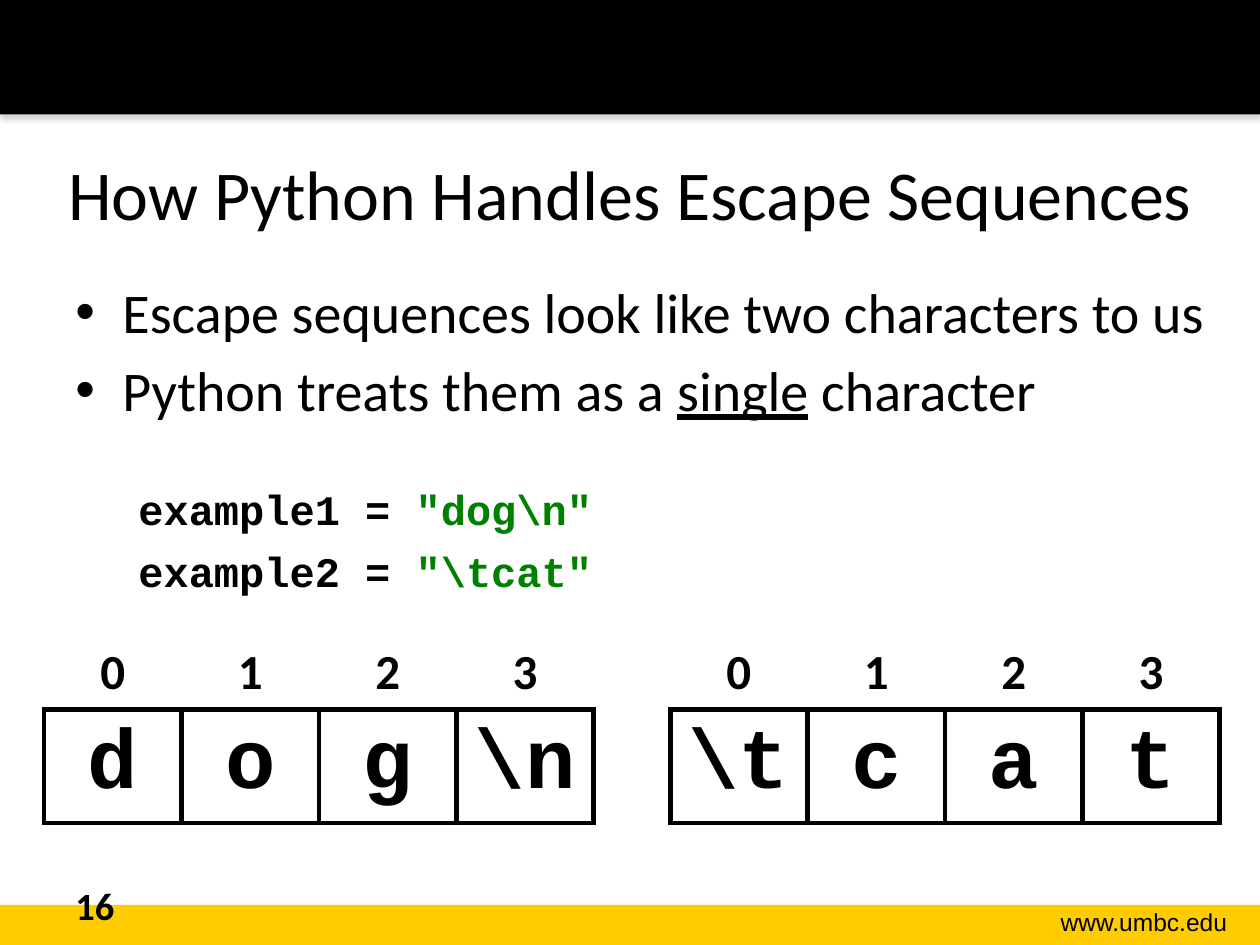
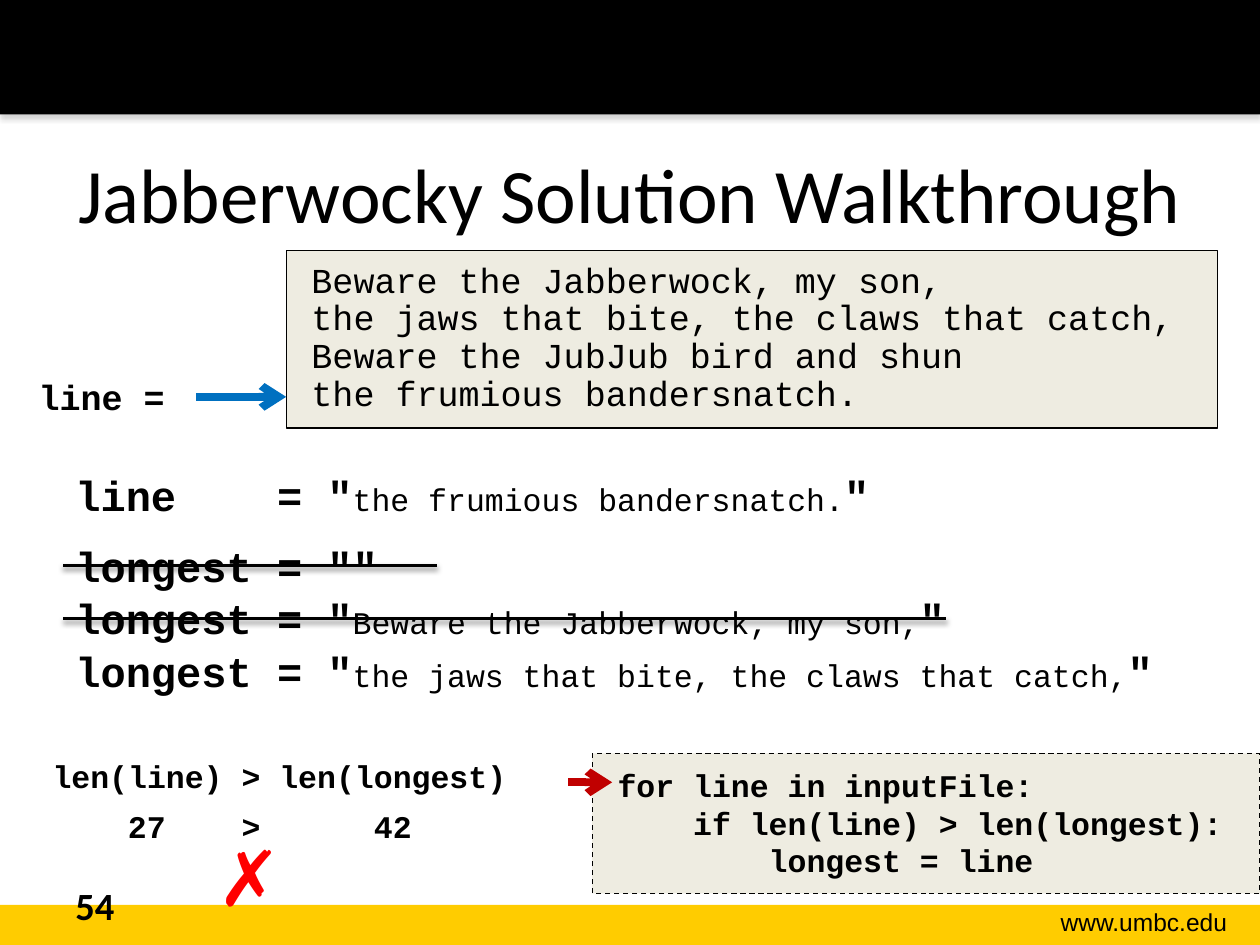
import lxml.etree
import pptx
import pptx.dml.color
import pptx.enum.dml
import pptx.enum.shapes
import pptx.enum.text
import pptx.oxml.ns
import pptx.util

Cm = pptx.util.Cm
Pt = pptx.util.Pt
RGB = pptx.dml.color.RGBColor.from_string
qn = pptx.oxml.ns.qn
SubElement = lxml.etree.SubElement
ALIGN = pptx.enum.text.PP_ALIGN
ANCHOR = pptx.enum.text.MSO_ANCHOR
RECTANGLE = pptx.enum.shapes.MSO_SHAPE.RECTANGLE
STRAIGHT = pptx.enum.shapes.MSO_CONNECTOR.STRAIGHT


class Theme:
    black = RGB("000000")
    white = RGB("FFFFFF")
    gold = RGB("FFCC00")
    panel = RGB("EEECE1")
    string_green = RGB("008000")
    cross_red = RGB("FF0000")
    arrow_red = RGB("C00000")
    arrow_blue = RGB("0070C0")
    # Text styles: font, size, bold
    long_title = ("Calibri", 40, False)
    title = ("Calibri", 44, False)
    body = ("Calibri", 32, False)
    index = ("Calibri", 28, True)
    number = ("Calibri", 22, True)
    cross = ("Calibri", 44, True)
    url = ("Arial", 14, False)
    letter = ("Courier New", 48, True)
    code = ("Courier New", 24, True)
    label = ("Courier New", 20, True)
    poem = ("Courier New", 20, False)
    small_code = ("Courier New", 18, True)
    value_size = 18
    # Shadows: colour, opacity in percent, blur, distance
    band_shadow = ("808080", 35, 3.1, 1.8)
    strike_shadow = ("000000", 38, 3.1, 1.6)


def set_shadow(shape, shadow=None):
    """Give the shape a shadow falling straight down, or none at all."""
    effects = SubElement(shape._element.spPr, qn("a:effectLst"))
    if shadow:
        color, opacity, blur, distance = shadow
        outer = SubElement(effects, qn("a:outerShdw"), blurRad=str(Pt(blur)),
                           dist=str(Pt(distance)), dir="5400000", rotWithShape="0")
        tint = SubElement(outer, qn("a:srgbClr"), val=color)
        SubElement(tint, qn("a:alpha"), val=str(opacity * 1000))


def write(frame, lines, style, alignment=ALIGN.LEFT, color=Theme.black):
    """Fill the frame; a line is a text or a list of (text, font changes)."""
    font_name, size, bold = style
    frame.word_wrap = True
    for number, line in enumerate(lines):
        paragraph = frame.add_paragraph() if number else frame.paragraphs[0]
        paragraph.alignment = alignment
        paragraph.font.name = font_name
        paragraph.font.size = Pt(size)
        paragraph.font.bold = bold
        paragraph.font.color.rgb = color
        for text, changes in ([(line, {})] if isinstance(line, str) else line):
            run = paragraph.add_run()
            run.text = text
            for name, value in changes.items():
                if name == "color":
                    run.font.color.rgb = value
                else:
                    setattr(run.font, name, value)
    return frame


presentation = pptx.Presentation()
presentation.slide_width = Cm(25.4)
presentation.slide_height = Cm(19.05)

# Shared frame of both slides
slides = []
for title, title_style, slide_number in [
    ("How Python Handles Escape Sequences", Theme.long_title, "16"),
    ("Jabberwocky Solution Walkthrough", Theme.title, "54"),
]:
    slide = presentation.slides.add_slide(presentation.slide_layouts[6])
    slides.append(slide)
    for top, height, color, shadow in [
        (18.24, 0.81, Theme.gold, None),
        (0, 2.31, Theme.black, Theme.band_shadow),
    ]:
        band = slide.shapes.add_shape(RECTANGLE, 0, Cm(top), Cm(25.4), Cm(height))
        band.fill.solid()
        band.fill.fore_color.rgb = color
        band.line.fill.background()
        set_shadow(band, shadow)
    url_box = slide.shapes.add_textbox(Cm(19.94), Cm(18.16), Cm(5.05), Cm(0.86))
    write(url_box.text_frame, ["www.umbc.edu"], Theme.url, ALIGN.RIGHT)
    title_box = slide.shapes.add_textbox(Cm(0.8), Cm(2.29), Cm(23.8), Cm(3.18))
    title_box.text_frame.vertical_anchor = ANCHOR.MIDDLE
    write(title_box.text_frame, [title], title_style, ALIGN.CENTER)
    number_box = slide.shapes.add_textbox(Cm(1.27), Cm(17.65), Cm(5.92), Cm(1.02))
    write(number_box.text_frame, [slide_number], Theme.number)

escape_slide, walkthrough_slide = slides

# Escape sequences: bullets followed by code
body = escape_slide.shapes.add_textbox(Cm(1.27), Cm(5.46), Cm(23.32), Cm(11.56)).text_frame
write(body, [
    "Escape sequences look like two characters to us",
    [("Python treats them as a ", {}), ("single", {"underline": True}), (" character", {})],
], Theme.body)
for paragraph in body.paragraphs:
    properties = paragraph._p.get_or_add_pPr()
    properties.set("marL", str(Cm(0.95)))
    properties.set("indent", str(Cm(-0.95)))
    bullet = lxml.etree.Element(qn("a:buChar"), char="•")
    properties.insert(0, bullet)
    properties.insert(0, lxml.etree.Element(qn("a:buFont"), typeface="Arial"))
body.paragraphs[1].space_before = Pt(6.4)

for name, literal, gap in [("example1", '"dog\\n"', 35), ("example2", '"\\tcat"', 6.4)]:
    paragraph = body.add_paragraph()
    paragraph._p.get_or_add_pPr().set("marL", str(Cm(1.27)))
    paragraph.space_before = Pt(gap)
    paragraph.font.name, size, paragraph.font.bold = Theme.code
    paragraph.font.size = Pt(size)
    for text, color in [(f"{name} = ", Theme.black), (literal, Theme.string_green)]:
        run = paragraph.add_run()
        run.text = text
        run.font.color.rgb = color

# Escape sequences: indexed characters
for left, characters in [(0.89, ["d", "o", "g", "\\n"]), (13.51, ["\\t", "c", "a", "t"])]:
    table = escape_slide.shapes.add_table(
        2, 4, Cm(left), Cm(12.83), Cm(11.08), Cm(3.58)).table
    table.first_row = False
    table.horz_banding = False
    table.rows[0].height = Cm(1.47)
    table.rows[1].height = Cm(2.11)
    for column, character in enumerate(characters):
        table.columns[column].width = Cm(2.77)
        for row, text, style, anchor, edges in [
            (0, str(column), Theme.index, ANCHOR.BOTTOM, "B"),
            (1, character, Theme.letter, ANCHOR.MIDDLE, "LRTB"),
        ]:
            cell = table.cell(row, column)
            cell.vertical_anchor = anchor
            cell_properties = cell._tc.get_or_add_tcPr()
            for edge in "LRTB":
                border = SubElement(cell_properties, qn(f"a:ln{edge}"), w=str(Pt(3)))
                if edge in edges:
                    fill = SubElement(border, qn("a:solidFill"))
                    SubElement(fill, qn("a:srgbClr"), val=str(Theme.black))
                else:
                    SubElement(border, qn("a:noFill"))
            if row:
                cell.fill.solid()
                cell.fill.fore_color.rgb = Theme.white
            else:
                cell.fill.background()
            write(cell.text_frame, [text], style, ALIGN.CENTER)

# Walkthrough: poem and code panels
for box, lines, style, spacing, dash in [
    ((5.77, 5.05, 18.77, 3.58), [
        "Beware the Jabberwock, my son,",
        "the jaws that bite, the claws that catch,",
        "Beware the JubJub bird and shun",
        "the frumious bandersnatch.",
    ], Theme.poem, 0.9, None),
    ((11.94, 15.19, 13.46, 2.82), [
        "for line in inputFile:",
        "    if len(line) > len(longest):",
        "        longest = line",
    ], Theme.small_code, 1.0, pptx.enum.dml.MSO_LINE.DASH),
]:
    panel = walkthrough_slide.shapes.add_shape(RECTANGLE, *map(Cm, box))
    panel.fill.solid()
    panel.fill.fore_color.rgb = Theme.panel
    panel.line.color.rgb = Theme.black
    panel.line.width = Pt(0.75)
    panel.line.dash_style = dash
    set_shadow(panel)
    frame = panel.text_frame
    frame.vertical_anchor = ANCHOR.TOP
    frame.margin_left = frame.margin_right = Cm(0.51)
    frame.margin_top = frame.margin_bottom = Cm(0.25)
    write(frame, lines, style)
    for paragraph in frame.paragraphs:
        paragraph.line_spacing = spacing

# Walkthrough: values of the variables
for top, variable, value in [
    (9.35, "line    = ", "the frumious bandersnatch."),
    (10.77, "longest = ", ""),
    (11.81, "longest = ", "Beware the Jabberwock, my son,"),
    (12.88, "longest = ", "the jaws that bite, the claws that catch,"),
]:
    runs = [(variable + '"', {}),
            (value, {"size": Pt(Theme.value_size), "bold": False}),
            ('"', {})]
    value_box = walkthrough_slide.shapes.add_textbox(Cm(1.27), Cm(top), Cm(22.63), Cm(1.27))
    write(value_box.text_frame, [[run for run in runs if run[0]]], Theme.code)

# Walkthrough: labels and the length comparison
for box, text, style, alignment, color in [
    ((0.53, 7.44, 3.43, 1.12), "line =", Theme.label, ALIGN.LEFT, Theme.black),
    ((0.81, 15.14, 9.88, 1.02), "len(line) > len(longest)", Theme.small_code,
     ALIGN.LEFT, Theme.black),
    ((0.81, 16.15, 9.88, 1.02), "\t27\t>\t42", Theme.small_code, ALIGN.LEFT, Theme.black),
    ((3.61, 16.59, 2.87, 2.13), "✗", Theme.cross, ALIGN.CENTER, Theme.cross_red),
]:
    label_box = walkthrough_slide.shapes.add_textbox(*map(Cm, box))
    write(label_box.text_frame, [text], style, alignment, color)
    if "\t" in text:
        tabs = lxml.etree.Element(qn("a:tabLst"))
        for position in (1.52, 3.81, 6.48):
            SubElement(tabs, qn("a:tab"), pos=str(Cm(position)), algn="l")
        label_box.text_frame.paragraphs[0]._p.get_or_add_pPr().insert(0, tabs)

# Walkthrough: strike-through lines and arrows
for left, right, height, color, width, shadow, is_arrow in [
    (1.27, 8.81, 11.4, Theme.black, 2, Theme.strike_shadow, False),
    (1.27, 19.08, 12.47, Theme.black, 2, Theme.strike_shadow, False),
    (11.46, 12.34, 15.77, Theme.arrow_red, 4.5, None, True),
    (3.96, 5.77, 8, Theme.arrow_blue, 4.5, None, True),
]:
    connector = walkthrough_slide.shapes.add_connector(
        STRAIGHT, Cm(left), Cm(height), Cm(right), Cm(height))
    connector.line.color.rgb = color
    connector.line.width = Pt(width)
    if is_arrow:
        SubElement(connector.line._get_or_add_ln(), qn("a:tailEnd"), type="arrow")
    set_shadow(connector, shadow)

presentation.save("out.pptx")
